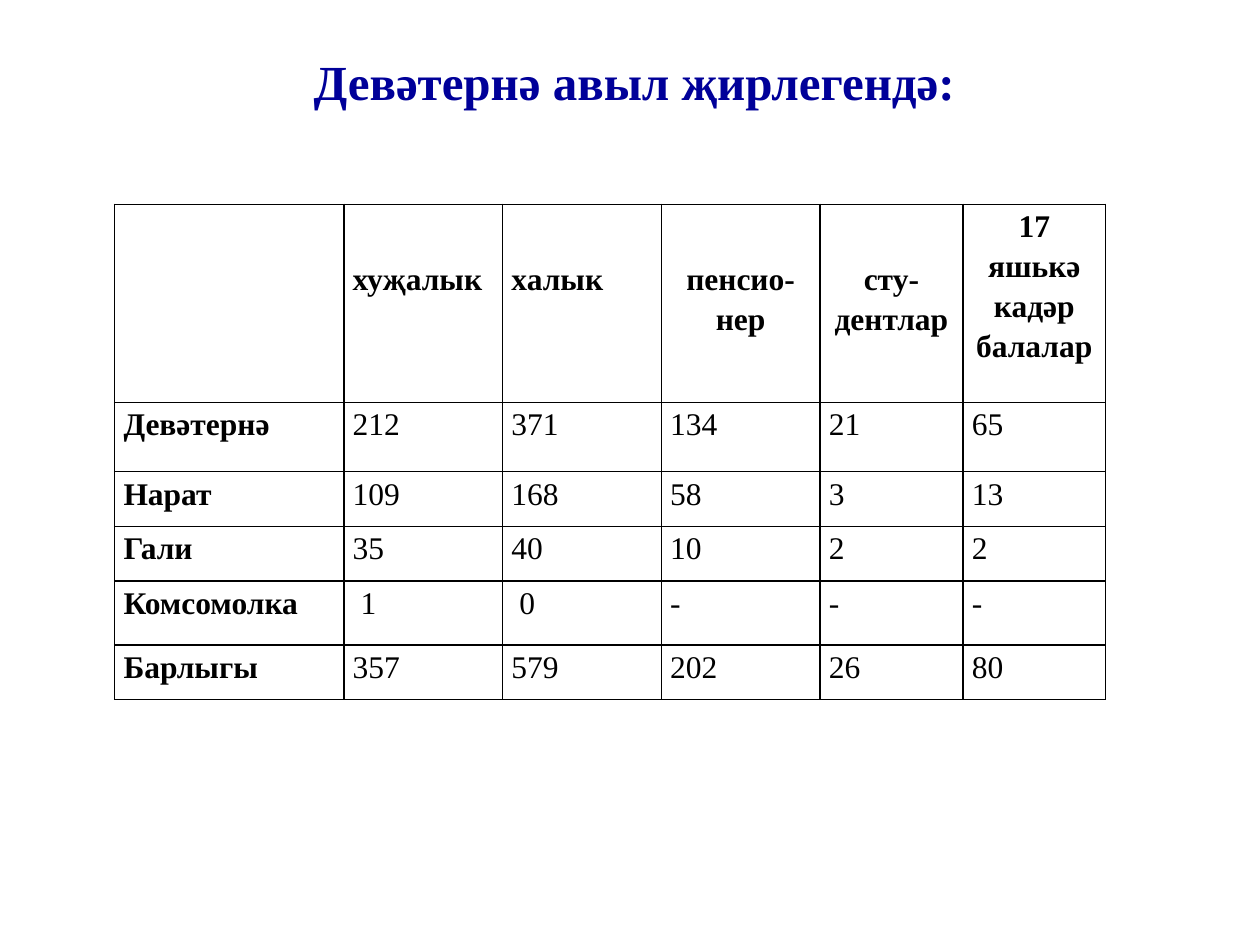
from dataclasses import dataclass

from lxml.etree import SubElement
from pptx import Presentation
from pptx.dml.color import RGBColor
from pptx.enum.text import MSO_AUTO_SIZE, PP_ALIGN
from pptx.oxml.ns import qn
from pptx.util import Cm, Pt


@dataclass(frozen=True)
class Theme:
    font: str = "Times New Roman"
    ink: str = "000000"
    heading: str = "000099"
    heading_size: int = 28
    body_size: int = 18
    line_spacing: float = 1.15
    space_after: int = 10
    border_width: int = 1


def write(frame, text, *, font, size, color, bold=False, align=PP_ALIGN.LEFT,
          line_spacing=1.0, space_after=0):
    paragraph = frame.paragraphs[0]
    paragraph.alignment = align
    paragraph.line_spacing = line_spacing
    paragraph.space_after = Pt(space_after)
    run = paragraph.add_run()
    run.text = text
    run.font.name = font
    run.font.size = Pt(size)
    run.font.bold = bold
    run.font.color.rgb = RGBColor.from_string(color)


class SlideBuilder:
    def __init__(self, slide, theme):
        self.slide = slide
        self.theme = theme

    def title(self, text, left, top, width, height):
        frame = self.slide.shapes.add_textbox(
            Cm(left), Cm(top), Cm(width), Cm(height)).text_frame
        frame.word_wrap = True
        frame.auto_size = MSO_AUTO_SIZE.SHAPE_TO_FIT_TEXT
        write(frame, text, font=self.theme.font, size=self.theme.heading_size,
              color=self.theme.heading, bold=True, align=PP_ALIGN.CENTER)

    def border(self, cell):
        properties = cell._tc.get_or_add_tcPr()
        for side in ("a:lnL", "a:lnR", "a:lnT", "a:lnB"):
            line = SubElement(properties, qn(side),
                              w=str(Pt(self.theme.border_width)))
            fill = SubElement(line, qn("a:solidFill"))
            SubElement(fill, qn("a:srgbClr"), val=self.theme.ink)

    def cell(self, cell, text, top_margin=0, **style):
        cell.margin_left = cell.margin_right = Cm(0.18)
        cell.margin_top, cell.margin_bottom = Cm(top_margin), Cm(0)
        self.border(cell)
        cell.fill.background()
        if text:
            write(cell.text_frame, text, font=self.theme.font,
                  size=self.theme.body_size, color=self.theme.ink,
                  line_spacing=self.theme.line_spacing,
                  space_after=self.theme.space_after, **style)

    def table(self, rows, left, top, widths, heights, centered_from, lowered):
        table = self.slide.shapes.add_table(
            len(rows), len(widths), Cm(left), Cm(top),
            Cm(sum(widths)), Cm(sum(heights))).table
        table.first_row = table.horz_banding = False
        for column, width in zip(table.columns, widths):
            column.width = Cm(width)
        for row, height in zip(table.rows, heights):
            row.height = Cm(height)
        for r, values in enumerate(rows):
            for c, value in enumerate(values):
                header = r == 0
                centered = header and c >= centered_from
                self.cell(
                    table.cell(r, c), value,
                    top_margin=1.07 if header and c in lowered else 0,
                    bold=header or c == 0,
                    align=PP_ALIGN.CENTER if centered else PP_ALIGN.JUSTIFY)


def main():
    presentation = Presentation()
    presentation.slide_width, presentation.slide_height = Cm(25.4), Cm(19.05)
    slide = presentation.slides.add_slide(presentation.slide_layouts[6])
    builder = SlideBuilder(slide, Theme())

    population = [
        ("", "хуҗалык", "халык", "пенсио-нер", "сту-дентлар",
         "17 яшькә кадәр балалар"),
        ("Девәтернә", "212", "371", "134", "21", "65"),
        ("Нарат", "109", "168", "58", "3", "13"),
        ("Гали", "35", "40", "10", "2", "2"),
        ("Комсомолка", " 1", " 0", "-", "-", "-"),
        ("Барлыгы", "357", "579", "202", "26", "80"),
    ]
    builder.table(population, 2.31, 4.12,
                  widths=[4.62, 3.2, 3.2, 3.2, 2.88, 2.88],
                  heights=[3.99, 1.4, 1.1, 1.1, 1.29, 1.1],
                  centered_from=3, lowered=range(1, 5))
    builder.title("Девәтернә авыл җирлегендә:", 2.69, 0.91, 20.19, 1.45)
    presentation.save("out.pptx")


if __name__ == "__main__":
    main()
